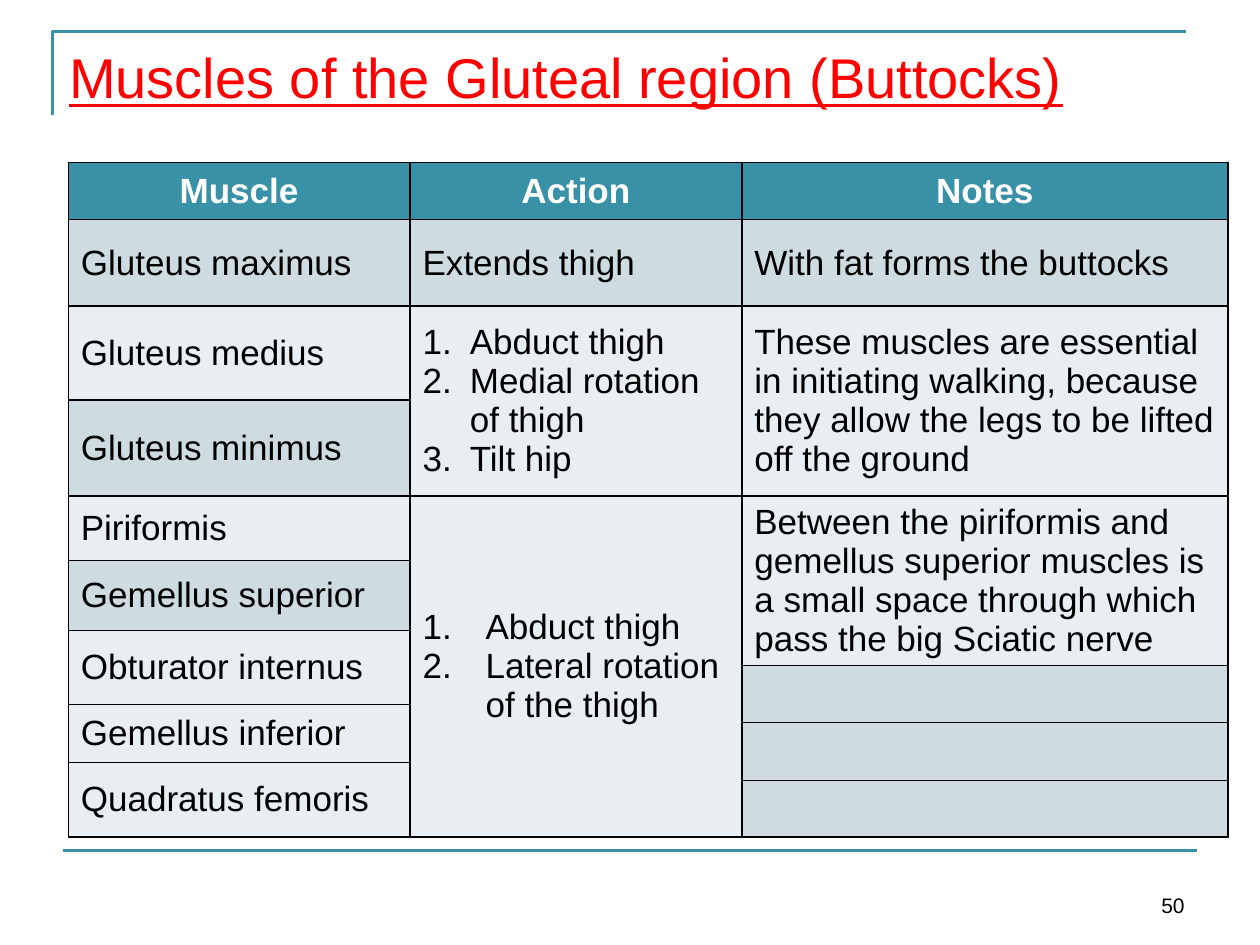
"""Builds the slide on the muscles of the gluteal region."""
from lxml import etree
from pptx import Presentation
from pptx.dml.color import RGBColor
from pptx.enum import shapes, text
from pptx.oxml import ns
from pptx.util import Pt

TEAL = RGBColor(0x38, 0x91, 0xA7)
MID = RGBColor(0xCE, 0xDC, 0xE1)
PALE = RGBColor(0xE8, 0xEE, 0xF1)
RED = RGBColor(0xFF, 0, 0)
BLACK = RGBColor(0, 0, 0)
WHITE = RGBColor(0xFF, 0xFF, 0xFF)

TITLE = "Muscles of the Gluteal region (Buttocks)"
PAGE_NUMBER = "50"
HEADINGS = ["Muscle", "Action", "Notes"]
COLUMN_WIDTHS = [195.3, 189.6, 277.8]
ROW_HEIGHTS = [32.7, 49.5, 53.5, 55, 36.7, 40.2, 20, 22.3, 10.3, 22.7, 10.3, 32.5]
COLUMNS = [
    [
        (1, MID, ["Gluteus maximus"], 0),
        (1, PALE, ["Gluteus medius"], 0),
        (1, MID, ["Gluteus minimus"], 0),
        (1, PALE, ["Piriformis"], 0),
        (1, MID, ["Gemellus superior"], 0),
        (2, PALE, ["Obturator internus"], 0),
        (2, PALE, ["Gemellus inferior"], 0),
        (2, PALE, ["Quadratus femoris"], 0),
    ],
    [
        (1, MID, ["Extends thigh"], 0),
        (2, PALE, ["Abduct thigh", "Medial rotation of thigh", "Tilt hip"], 27),
        (8, PALE, ["Abduct thigh", "Lateral rotation of the thigh"], 36),
    ],
    [
        (1, MID, ["With fat forms the buttocks"], 0),
        (2, PALE, ["These muscles are essential in initiating walking, because "
                   "they allow the legs to be lifted off the ground"], 0),
        (3, PALE, ["Between the piriformis and gemellus superior muscles is a "
                   "small space through which pass the big Sciatic nerve"], 0),
        (2, MID, [], 0),
        (2, MID, [], 0),
        (1, MID, [], 0),
    ],
]


def write(paragraph, words, color, **formats):
    run = paragraph.add_run()
    run.text = words
    run.font.color.rgb = color
    for name, value in {"name": "Arial", "size": Pt(20), "bold": False, **formats}.items():
        setattr(run.font, name, value)


def number(paragraph, indent):
    properties = paragraph._p.get_or_add_pPr()
    properties.set("marL", str(Pt(indent)))
    properties.set("indent", str(-Pt(indent)))
    etree.SubElement(properties, ns.qn("a:buAutoNum"), type="arabicPeriod")


def paint(cell, color):
    cell.fill.solid()
    cell.fill.fore_color.rgb = color
    cell.vertical_anchor = text.MSO_ANCHOR.MIDDLE
    properties = cell._tc.get_or_add_tcPr()
    for position, side in enumerate(["lnL", "lnR", "lnT", "lnB"]):
        border = etree.Element(ns.qn(f"a:{side}"), w=str(Pt(1)))
        solid = etree.SubElement(border, ns.qn("a:solidFill"))
        etree.SubElement(solid, ns.qn("a:srgbClr"), val=str(BLACK))
        properties.insert(position, border)


def add_muscle_table(slide):
    table = slide.shapes.add_table(
        len(ROW_HEIGHTS), len(HEADINGS), Pt(39), Pt(92.8),
        Pt(sum(COLUMN_WIDTHS)), Pt(sum(ROW_HEIGHTS))).table
    table.first_row = table.horz_banding = False
    for column, width in zip(table.columns, COLUMN_WIDTHS):
        column.width = Pt(width)
    for row, height in zip(table.rows, ROW_HEIGHTS):
        row.height = Pt(height)
    for across, (heading, entries) in enumerate(zip(HEADINGS, COLUMNS)):
        head = table.cell(0, across)
        paint(head, TEAL)
        head.text_frame.paragraphs[0].alignment = text.PP_ALIGN.CENTER
        write(head.text_frame.paragraphs[0], heading, WHITE, bold=True)
        down = 1
        for span, shade, lines, indent in entries:
            for covered in range(down, down + span):
                paint(table.cell(covered, across), shade)
            cell = table.cell(down, across)
            if span > 1:
                cell.merge(table.cell(down + span - 1, across))
            for position, line in enumerate(lines):
                frame = cell.text_frame
                paragraph = frame.add_paragraph() if position else frame.paragraphs[0]
                if indent:
                    number(paragraph, indent)
                write(paragraph, line, BLACK)
            down += span


def add_label(slide, box, words, color, anchor, alignment, **formats):
    frame = slide.shapes.add_textbox(*map(Pt, box)).text_frame
    frame.word_wrap = True
    frame.vertical_anchor = anchor
    frame.paragraphs[0].alignment = alignment
    write(frame.paragraphs[0], words, color, **formats)


def add_rules(slide):
    builder = slide.shapes.build_freeform(Pt(30), Pt(66))
    builder.add_line_segments([(Pt(30), Pt(18)), (Pt(678), Pt(18))], close=False)
    corner = builder.convert_to_shape()
    corner.shadow.inherit = False
    corner.fill.background()
    footer = slide.shapes.add_connector(
        shapes.MSO_CONNECTOR.STRAIGHT, Pt(36), Pt(486), Pt(684), Pt(486))
    etree.SubElement(footer._element.spPr, ns.qn("a:effectLst"))
    for rule in (corner, footer):
        rule.line.color.rgb = TEAL
        rule.line.width = Pt(1.5)


def main():
    deck = Presentation()
    deck.slide_width, deck.slide_height = Pt(720), Pt(540)
    slide = deck.slides.add_slide(deck.slide_layouts[6])
    add_rules(slide)
    add_muscle_table(slide)
    add_label(slide, (32.4, 21, 663, 46), TITLE, RED, text.MSO_ANCHOR.TOP,
              text.PP_ALIGN.LEFT, size=Pt(32), underline=True)
    add_label(slide, (516, 492, 168, 36), PAGE_NUMBER, BLACK, text.MSO_ANCHOR.BOTTOM,
              text.PP_ALIGN.RIGHT, size=Pt(12))
    deck.save("out.pptx")


if __name__ == "__main__":
    main()
